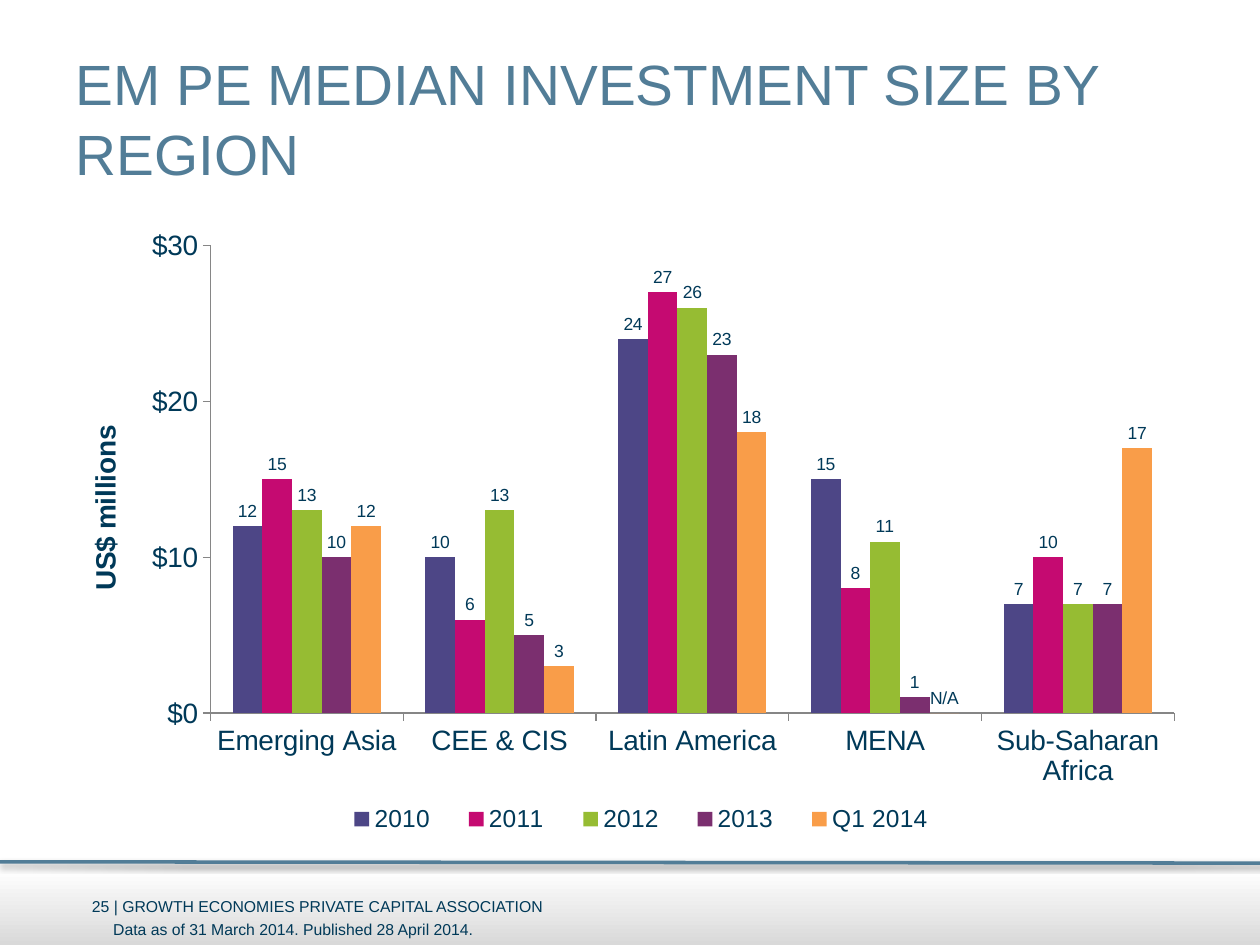
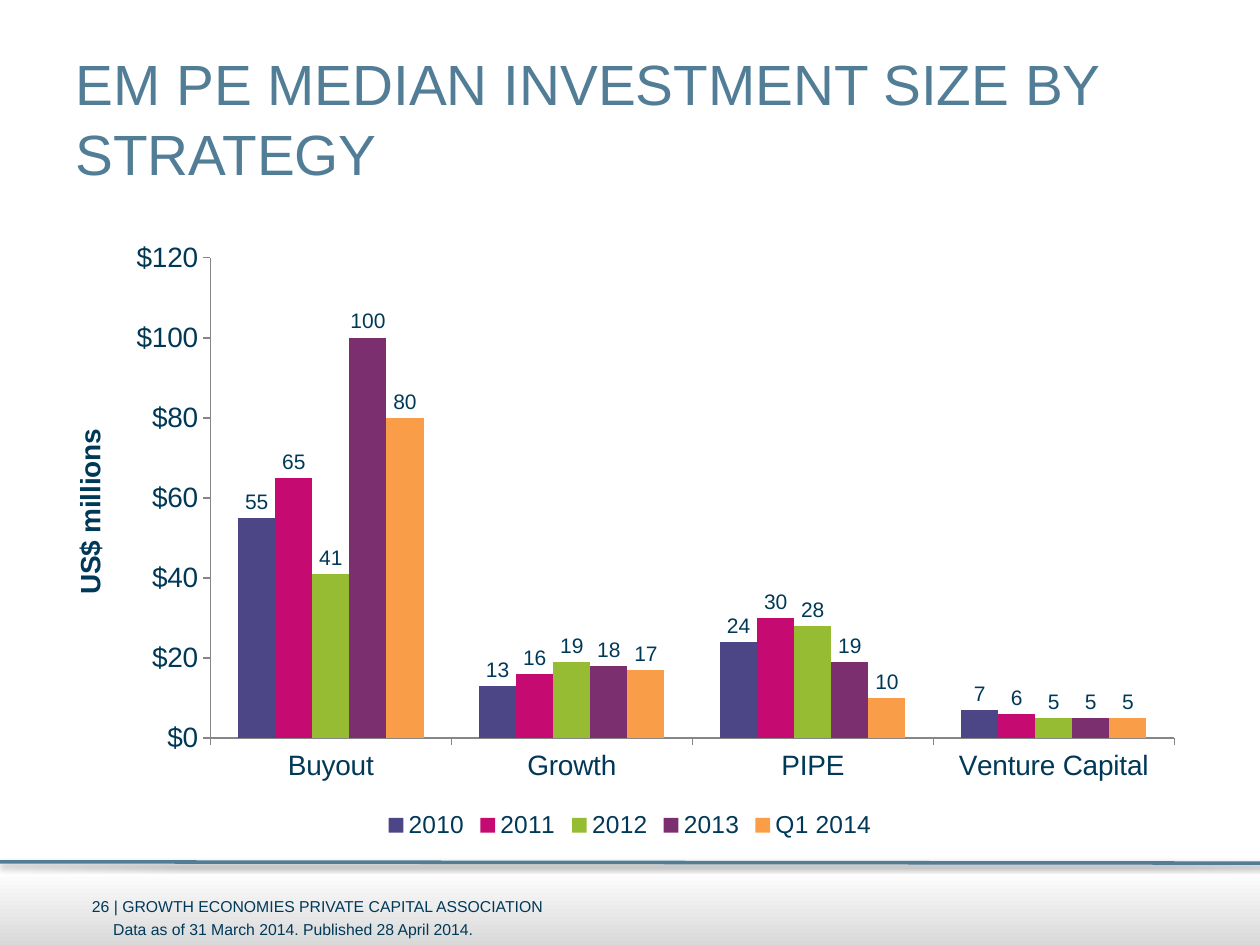
from lxml import etree
from pptx import Presentation
from pptx import util as u
from pptx.chart import data as chart_data
from pptx.dml import color as dml
from pptx.enum import chart as charts, shapes, text
from pptx.oxml import ns, parse_xml

PX = 9144
COLORS = {
    "navy": "003958", "steel": "527D97", "axis": "868686",
    "band_dark": "D9D9D9", "band_light": "FFFFFF",
    "2010": "4D4686", "2011": "C50A71", "2012": "96BC33",
    "2013": "7B2F6F", "Q1 2014": "F99D49",
}
TITLE_FORMAT = {"name": "Arial", "size": u.Pt(32.4), "bold": False}
FOOTER_FORMAT = {"name": "Arial", "size": u.Pt(9)}
AXIS_FORMAT = {"name": "Arial", "size": u.Pt(16), "bold": False}
AXIS_TITLE_FORMAT = {"name": "Arial", "size": u.Pt(16), "bold": True}
LEGEND_FORMAT = {"name": "Arial", "size": u.Pt(14)}
LINE_SHADOW = (
    f'<a:effectLst {ns.nsdecls("a")}>'
    f'<a:outerShdw blurRad="{u.Pt(3.1)}" dist="{u.Pt(1.6)}" dir="5400000">'
    '<a:srgbClr val="000000"><a:alpha val="38000"/></a:srgbClr>'
    '</a:outerShdw></a:effectLst>'
)
FOOTERS = [
    ((73, 707, 668, 25), "{} | GROWTH ECONOMIES PRIVATE CAPITAL ASSOCIATION", 0, text.MSO_ANCHOR.MIDDLE),
    ((80, 725, 354, 25), "Data as of 31 March 2014. Published 28 April 2014.", 10, text.MSO_ANCHOR.TOP),
]
PAGES = [
    {
        "number": 25, "title": "EM PE MEDIAN INVESTMENT SIZE BY REGION",
        "categories": ["Emerging Asia", "CEE & CIS", "Latin America", "MENA", "Sub-Saharan Africa"],
        "series": {
            "2010": [12, 10, 24, 15, 7],
            "2011": [15, 6, 27, 8, 10],
            "2012": [13, 13, 26, 11, 7],
            "2013": [10, 5, 23, 1, 7],
            "Q1 2014": [12, 3, 18, 0, 17],
        },
        "maximum": 30, "step": 10, "label_size": 10,
        "plot": (0.13, 0.04, 0.85, 0.75), "legend": (0.23, 0.93, 0.56, 0.06),
        "missing": ("Q1 2014", 3),
    },
    {
        "number": 26, "title": "EM PE MEDIAN INVESTMENT SIZE BY STRATEGY",
        "categories": ["Buyout", "Growth", "PIPE", "Venture Capital"],
        "series": {
            "2010": [55, 13, 24, 7],
            "2011": [65, 16, 30, 6],
            "2012": [41, 19, 28, 5],
            "2013": [100, 18, 19, 5],
            "Q1 2014": [80, 17, 10, 5],
        },
        "maximum": 120, "step": 20, "label_size": 12,
        "plot": (0.13, 0.06, 0.85, 0.77), "legend": None,
        "missing": None,
    },
]


def style(font, values, color="navy"):
    for key, value in values.items():
        setattr(font, key, value)
    font.color.rgb = dml.RGBColor.from_string(COLORS[color])


def place(element, frame, before, inner=False):
    for old in element.findall(ns.qn("c:layout")):
        element.remove(old)
    layout = etree.Element(ns.qn("c:layout"))
    manual = etree.SubElement(layout, ns.qn("c:manualLayout"))
    entries = [("layoutTarget", "inner")] if inner else []
    entries += [("xMode", "edge"), ("yMode", "edge"), *zip("xywh", frame)]
    for name, value in entries:
        etree.SubElement(manual, ns.qn(f"c:{name}")).set("val", str(value))
    element.find(ns.qn(before)).addprevious(layout)


deck = Presentation()
deck.slide_width, deck.slide_height = 1000 * PX, 750 * PX

for content in PAGES:
    page = deck.slides.add_slide(deck.slide_layouts[5])

    band = page.shapes.add_shape(shapes.MSO_SHAPE.RECTANGLE, 0, 669 * PX, 1000 * PX, 81 * PX)
    band.shadow.inherit = False
    band.line.fill.background()
    band.fill.gradient()
    band.fill.gradient_angle = 90
    for stop, position, name in zip(band.fill.gradient_stops, (0, 0.74), ("band_dark", "band_light")):
        stop.position = position
        stop.color.rgb = dml.RGBColor.from_string(COLORS[name])

    rule = page.shapes.add_connector(shapes.MSO_CONNECTOR.STRAIGHT, 0, 684 * PX, 1001 * PX, 685 * PX)
    rule.line.width = u.Pt(2)
    rule.line.color.rgb = dml.RGBColor.from_string(COLORS["steel"])
    rule.element.spPr.append(parse_xml(LINE_SHADOW))

    for frame, wording, inset, anchor in FOOTERS:
        box = page.shapes.add_textbox(*(length * PX for length in frame))
        box.text_frame.word_wrap = True
        box.text_frame.margin_left = inset * PX
        box.text_frame.vertical_anchor = anchor
        span = box.text_frame.paragraphs[0].add_run()
        span.text = wording.format(content["number"])
        style(span.font, FOOTER_FORMAT)

    title = page.shapes.title
    title.left, title.top, title.width, title.height = (length * PX for length in (50, 30, 900, 125))
    title.text_frame.text = content["title"]
    title.text_frame.word_wrap = True
    title.text_frame.auto_size = text.MSO_AUTO_SIZE.NONE
    title.text_frame.vertical_anchor = text.MSO_ANCHOR.MIDDLE
    para = title.text_frame.paragraphs[0]
    para.alignment = text.PP_ALIGN.LEFT
    para.line_spacing = 1.04
    style(para.runs[0].font, TITLE_FORMAT, "steel")

    figures = chart_data.CategoryChartData(number_format="#,##0")
    figures.categories = content["categories"]
    for name, values in content["series"].items():
        figures.add_series(name, values)
    chart = page.shapes.add_chart(
        charts.XL_CHART_TYPE.COLUMN_CLUSTERED,
        *(length * PX for length in (50, 175, 900, 495)), figures,
    ).chart
    style(chart.font, {"name": "Arial", "size": u.Pt(18)})
    chart.has_title = False
    chart.has_legend = True
    chart.legend.position = charts.XL_LEGEND_POSITION.BOTTOM
    chart.legend.include_in_layout = False
    style(chart.legend.font, LEGEND_FORMAT)

    for axis in (chart.category_axis, chart.value_axis):
        axis.has_major_gridlines = False
        axis.major_tick_mark = charts.XL_TICK_MARK.OUTSIDE
        axis.minor_tick_mark = charts.XL_TICK_MARK.NONE
        axis.format.line.width = u.Pt(0.75)
        axis.format.line.color.rgb = dml.RGBColor.from_string(COLORS["axis"])
        style(axis.tick_labels.font, AXIS_FORMAT)
    amounts = chart.value_axis
    amounts.minimum_scale = 0
    amounts.maximum_scale = content["maximum"]
    amounts.major_unit = content["step"]
    amounts.tick_labels.number_format = '"$"#,##0'
    amounts.tick_labels.number_format_is_linked = False
    amounts.axis_title.text_frame.text = "US$ millions"
    style(amounts.axis_title.text_frame.paragraphs[0].runs[0].font, AXIS_TITLE_FORMAT)

    plot = chart.plots[0]
    plot.gap_width = 150
    plot.overlap = 0
    plot.vary_by_categories = False
    label_format = {"name": "Arial", "size": u.Pt(content["label_size"]), "bold": False}
    for series in plot.series:
        series.invert_if_negative = False
        series.format.fill.solid()
        series.format.fill.fore_color.rgb = dml.RGBColor.from_string(COLORS[series.name])
        labels = series.data_labels
        labels.show_value = True
        labels.number_format = "#,##0"
        labels.number_format_is_linked = False
        labels.position = charts.XL_LABEL_POSITION.OUTSIDE_END
        style(labels.font, label_format)
        if content["missing"] and series.name == content["missing"][0]:
            label = series.points[content["missing"][1]].data_label
            label.text_frame.text = "N/A"
            label.position = charts.XL_LABEL_POSITION.OUTSIDE_END
            style(label.text_frame.paragraphs[0].runs[0].font, label_format)

    plot_area = chart.element.find(".//" + ns.qn("c:plotArea"))
    place(plot_area, content["plot"], "c:barChart", inner=True)
    if content["legend"]:
        place(chart.element.find(".//" + ns.qn("c:legend")), content["legend"], "c:overlay")

deck.save("out.pptx")
